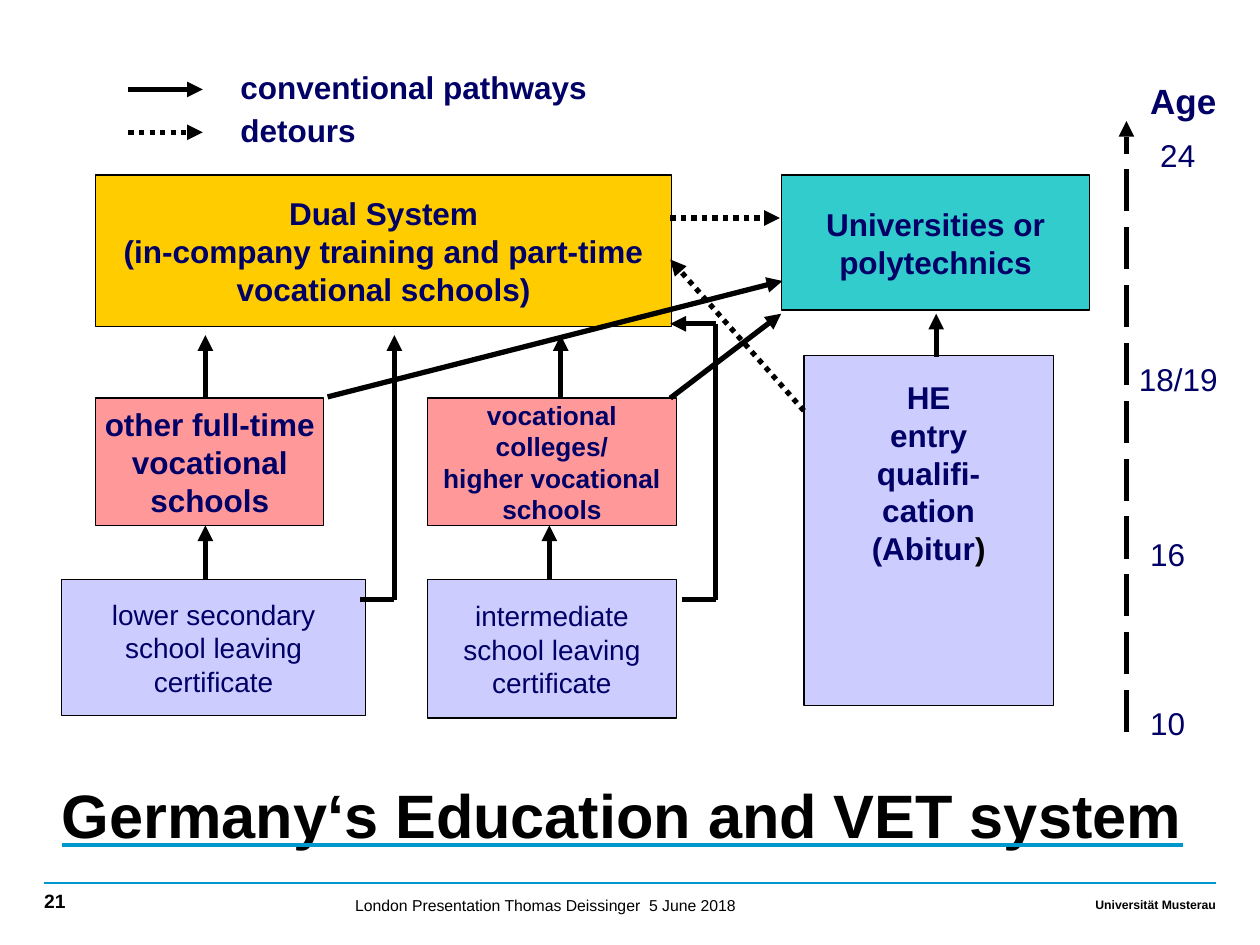
import pptx
import pptx.dml.color
import pptx.enum.dml
import pptx.enum.shapes
import pptx.enum.text
import pptx.oxml
import pptx.oxml.ns
import pptx.util
from lxml import etree
from pptx.util import Inches

ALIGN = pptx.enum.text.PP_ALIGN
ANCHOR = pptx.enum.text.MSO_ANCHOR
DASH = pptx.enum.dml.MSO_LINE
NAVY, BLACK, BLUE = "000066", "000000", "0097CC"
LILAC, PINK, YELLOW, TEAL = "CCCCFF", "FF9999", "FFCC00", "33CCCC"


def rgb(value):
    return pptx.dml.color.RGBColor.from_string(value)


def sub_element(parent, tag, **attributes):
    return etree.SubElement(parent, pptx.oxml.ns.qn(tag), **attributes)


def write_text(frame, text, size, bold=False, color=NAVY, align=ALIGN.LEFT):
    frame.text = text
    for paragraph in frame.paragraphs:
        paragraph.alignment = align
        font = paragraph.font
        font.name, font.size, font.bold = "Arial", pptx.util.Pt(size), bold
        font.color.rgb = rgb(color)


def set_margins(frame, left=0, top=0, right=0, bottom=0):
    frame.margin_left, frame.margin_top = Inches(left), Inches(top)
    frame.margin_right, frame.margin_bottom = Inches(right), Inches(bottom)


def add_box(slide, left, top, width, height, fill, text, size, bold=True):
    shape = slide.shapes.add_shape(
        pptx.enum.shapes.MSO_SHAPE.RECTANGLE,
        Inches(left), Inches(top), Inches(width), Inches(height))
    shape.shadow.inherit = False
    shape.fill.solid()
    shape.fill.fore_color.rgb = rgb(fill)
    shape.line.color.rgb = rgb(BLACK)
    shape.line.width = pptx.util.Pt(0.75)
    frame = shape.text_frame
    frame.word_wrap = False
    frame.vertical_anchor = ANCHOR.MIDDLE
    write_text(frame, text, size, bold, align=ALIGN.CENTER)
    return frame


def add_label(slide, left, top, width, height, text, size, **style):
    box = slide.shapes.add_textbox(
        Inches(left), Inches(top), Inches(width), Inches(height))
    frame = box.text_frame
    frame.word_wrap = True
    write_text(frame, text, size, **style)
    return frame


def add_line(slide, start, end, color=BLACK, width=3, dash=None, arrow=False):
    connector = slide.shapes.add_connector(
        pptx.enum.shapes.MSO_CONNECTOR.STRAIGHT,
        Inches(start[0]), Inches(start[1]), Inches(end[0]), Inches(end[1]))
    line = connector.line
    line.color.rgb = rgb(color)
    line.width = pptx.util.Pt(width)
    if dash:
        line.dash_style = dash
    properties = connector.element.spPr
    if arrow:
        sub_element(line._get_or_add_ln(), "a:tailEnd", type="triangle")
    sub_element(properties, "a:effectLst")


def add_pathway(slide, *points, dash=None):
    """Join the points with straight lines and put an arrowhead on the last."""
    for index in range(1, len(points)):
        add_line(slide, points[index - 1], points[index], dash=dash,
                 arrow=index == len(points) - 1)


def add_title(slide):
    frame = add_label(slide, 0.49, 6.11, 9.14, 0.94,
                      "Germany‘s Education and VET system", 35,
                      bold=True, color=BLACK)
    set_margins(frame)
    paragraph = frame.paragraphs[0]
    paragraph.line_spacing = 1.1
    run = paragraph.runs[0]
    run.font.underline = True
    underline = sub_element(run.font._element, "a:uFill")
    sub_element(sub_element(underline, "a:solidFill"), "a:srgbClr", val=BLUE)


def add_footer(slide):
    add_line(slide, (0.35, 7.01), (9.65, 7.01), color=BLUE, width=1)
    for left, width, text, size, align in (
            (0.35, 1.02, "21", 11, ALIGN.LEFT),
            (6.26, 3.39, "Universität Musterau", 7, ALIGN.RIGHT)):
        frame = add_label(slide, left, 7.06, width, 0.24, text, size,
                          bold=True, color=BLACK, align=align)
        set_margins(frame, bottom=0.06)
        frame.vertical_anchor = ANCHOR.BOTTOM
    add_label(slide, 2.72, 7.06, 4.65, 0.24,
              "London Presentation Thomas Deissinger  5 June 2018", 9,
              color=BLACK)


def add_institutions(slide):
    add_box(slide, 0.49, 4.6, 2.41, 1.08, LILAC,
            "lower secondary\nschool leaving\ncertificate", 16, bold=False)
    add_box(slide, 3.39, 4.6, 1.98, 1.1, LILAC,
            "intermediate\nschool leaving\ncertificate", 16, bold=False)
    add_box(slide, 0.76, 3.16, 1.81, 1.01, PINK,
            "other full-time\nvocational\nschools", 18)
    add_box(slide, 3.39, 3.16, 1.98, 1.01, PINK,
            "vocational\vcolleges/\vhigher vocational\vschools", 15)
    add_box(slide, 0.76, 1.39, 4.57, 1.2, YELLOW,
            "Dual System\n(in-company training and part-time\n"
            "vocational schools)", 18)
    add_box(slide, 6.2, 1.39, 2.45, 1.07, TEAL,
            "Universities or\npolytechnics", 18)
    entry = add_box(slide, 6.38, 2.82, 1.98, 2.78, LILAC,
                    "HE\nentry\nqualifi-\ncation\n(Abitur", 18)
    entry.vertical_anchor = ANCHOR.TOP
    entry.margin_top = Inches(0.18)
    bracket = entry.paragraphs[-1].add_run()
    bracket.text = ")"
    bracket.font.color.rgb = rgb(BLACK)


def add_pathways(slide):
    for x, bottom, top in ((1.63, 4.6, 4.17), (4.36, 4.6, 4.17),
                           (1.63, 3.15, 2.66), (4.45, 3.15, 2.66),
                           (7.43, 2.83, 2.49)):
        add_pathway(slide, (x, bottom), (x, top))
    add_pathway(slide, (2.86, 4.76), (3.13, 4.76), (3.13, 2.66))
    add_pathway(slide, (5.41, 4.76), (5.68, 4.76), (5.68, 2.57), (5.32, 2.57))
    add_pathway(slide, (2.6, 3.15), (6.21, 2.23))
    add_pathway(slide, (5.32, 3.16), (6.2, 2.49))
    add_pathway(slide, (5.32, 1.73), (6.19, 1.73), dash=DASH.ROUND_DOT)
    add_pathway(slide, (6.38, 3.26), (5.32, 2.06), dash=DASH.ROUND_DOT)


def add_legend(slide):
    for y, text, dash in ((0.71, "conventional pathways", None),
                          (1.05, "detours", DASH.ROUND_DOT)):
        add_pathway(slide, (1.02, y), (1.61, y), dash=dash)
        add_label(slide, 1.81, y - 0.22, 3.07, 0.45, text, 18, bold=True)


def add_age_axis(slide):
    add_line(slide, (8.94, 5.81), (8.94, 1.09), dash=DASH.LONG_DASH)
    add_pathway(slide, (8.94, 1.06), (8.94, 0.96))
    add_label(slide, 9.03, 0.58, 0.78, 0.45, "Age", 20, bold=True)
    for left, top, width, age in ((9.11, 1.03, 0.52, "24"),
                                  (8.94, 2.81, 0.86, "18/19"),
                                  (9.03, 4.2, 0.52, "16"),
                                  (9.03, 5.54, 0.52, "10")):
        add_label(slide, left, top, width, 0.41, age, 18)


def main():
    presentation = pptx.Presentation()
    presentation.slide_width, presentation.slide_height = Inches(10), Inches(7.5)
    slide = presentation.slides.add_slide(presentation.slide_layouts[6])
    add_footer(slide)
    add_title(slide)
    add_institutions(slide)
    add_legend(slide)
    add_pathways(slide)
    add_age_axis(slide)
    presentation.save("out.pptx")


if __name__ == "__main__":
    main()
